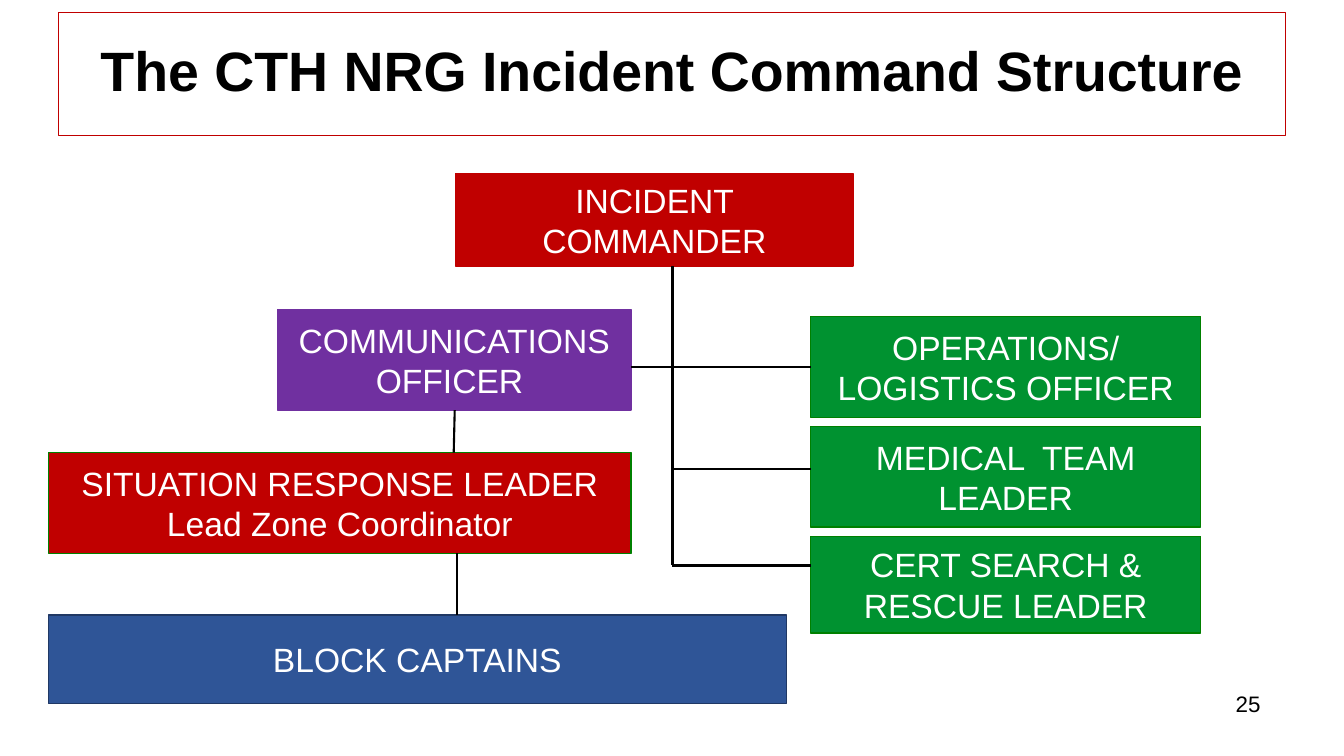
from lxml import etree
from pptx import Presentation
from pptx import util as u
from pptx.dml.color import RGBColor
from pptx.enum import shapes, text
from pptx.oxml.ns import qn

PX = 9144  # EMU per px, 100 px to the inch
FONT = "Arial"
BLACK = RGBColor(0x00, 0x00, 0x00)
WHITE = RGBColor(0xFF, 0xFF, 0xFF)
RED = RGBColor(0xC0, 0x00, 0x00)
PURPLE = RGBColor(0x70, 0x30, 0xA0)
GREEN = RGBColor(0x00, 0x92, 0x30)
DARK_GREEN = RGBColor(0x00, 0x80, 0x00)
BLUE = RGBColor(0x2F, 0x55, 0x97)
NAVY = RGBColor(0x20, 0x38, 0x64)

ROLES = [  # left, top, width, height, fill, line, paragraphs
    (452, 172, 394, 92, RED, RED, ["INCIDENT COMMANDER"]),
    (275, 307, 351, 100, PURPLE, PURPLE, ["COMMUNICATIONS OFFICER "]),
    (48, 449, 578, 100, RED, DARK_GREEN,
     ["SITUATION RESPONSE LEADER", "Lead Zone Coordinator"]),
    (48, 610, 732, 88, BLUE, NAVY, ["BLOCK CAPTAINS"]),
]
TEAM_LEFT, TEAM_TOP, TEAM_WIDTH, TEAM_PITCH = 804, 314, 387, 109
TEAMS = [  # height, name
    (100, "OPERATIONS/ LOGISTICS OFFICER"),
    (100, "MEDICAL  TEAM LEADER"),
    (96, "CERT SEARCH & RESCUE LEADER"),
]
TRUNK = 667
LINES = [  # x1, y1, x2, y2
    (TRUNK, 264, TRUNK, 561),
    (TEAM_LEFT, 364, 626, 364),
    (TEAM_LEFT, 465, TRUNK, 465),
    (TEAM_LEFT, 561, TRUNK, 561),
    (451, 407, 450, 449),
    (453, 549, 453, 610),
]


def px(*lengths):
    return [u.Emu(length * PX) for length in lengths]


def write(shape, lines, size, color, align, bold=False):
    """Fill a shape with one paragraph per line, anchored in the middle."""
    frame = shape.text_frame
    frame.word_wrap = True
    frame.auto_size = text.MSO_AUTO_SIZE.NONE
    frame.vertical_anchor = text.MSO_ANCHOR.MIDDLE
    for index, line in enumerate(lines):
        paragraph = frame.add_paragraph() if index else frame.paragraphs[0]
        paragraph.alignment = align
        run = paragraph.add_run()
        run.text = line
        run.font.name = FONT
        run.font.size = u.Pt(size)
        run.font.bold = bold
        run.font.color.rgb = color


def add_title(slide, title):
    shape = slide.shapes.title
    shape.left, shape.top, shape.width, shape.height = px(58, 12, 1217, 122)
    shape.line.color.rgb = RED
    shape.line.width = u.Pt(0.75)
    write(shape, [title], 39.6, BLACK, text.PP_ALIGN.CENTER, bold=True)
    shape.text_frame.paragraphs[0].line_spacing = 0.9


def add_role(slide, left, top, width, height, fill, line, lines):
    shape = slide.shapes.add_shape(
        shapes.MSO_SHAPE.RECTANGLE, *px(left, top, width, height))
    shape.shadow.inherit = False
    shape.fill.solid()
    shape.fill.fore_color.rgb = fill
    shape.line.color.rgb = line
    shape.line.width = u.Pt(1)
    write(shape, lines, 24, WHITE, text.PP_ALIGN.CENTER)


def add_line(slide, *ends):
    connector = slide.shapes.add_connector(
        shapes.MSO_CONNECTOR.STRAIGHT, *px(*ends))
    connector.line.color.rgb = BLACK
    connector.line.width = u.Pt(1.5)
    etree.SubElement(connector._element.spPr, qn("a:effectLst"))


def add_page_number(slide, number):
    box = slide.shapes.add_textbox(*px(1179, 678, 81, 40))
    write(box, [number], 16, BLACK, text.PP_ALIGN.RIGHT)


def main():
    presentation = Presentation()
    presentation.slide_width, presentation.slide_height = px(1333, 750)
    slide = presentation.slides.add_slide(presentation.slide_layouts[5])
    add_title(slide, "The CTH NRG Incident Command Structure")
    for role in ROLES:
        add_role(slide, *role)
    for index, (height, name) in enumerate(TEAMS):
        add_role(slide, TEAM_LEFT, TEAM_TOP + index * TEAM_PITCH, TEAM_WIDTH,
                 height, GREEN, DARK_GREEN, [name])
    for ends in LINES:
        add_line(slide, *ends)
    add_page_number(slide, "25")
    presentation.save("out.pptx")


if __name__ == "__main__":
    main()
